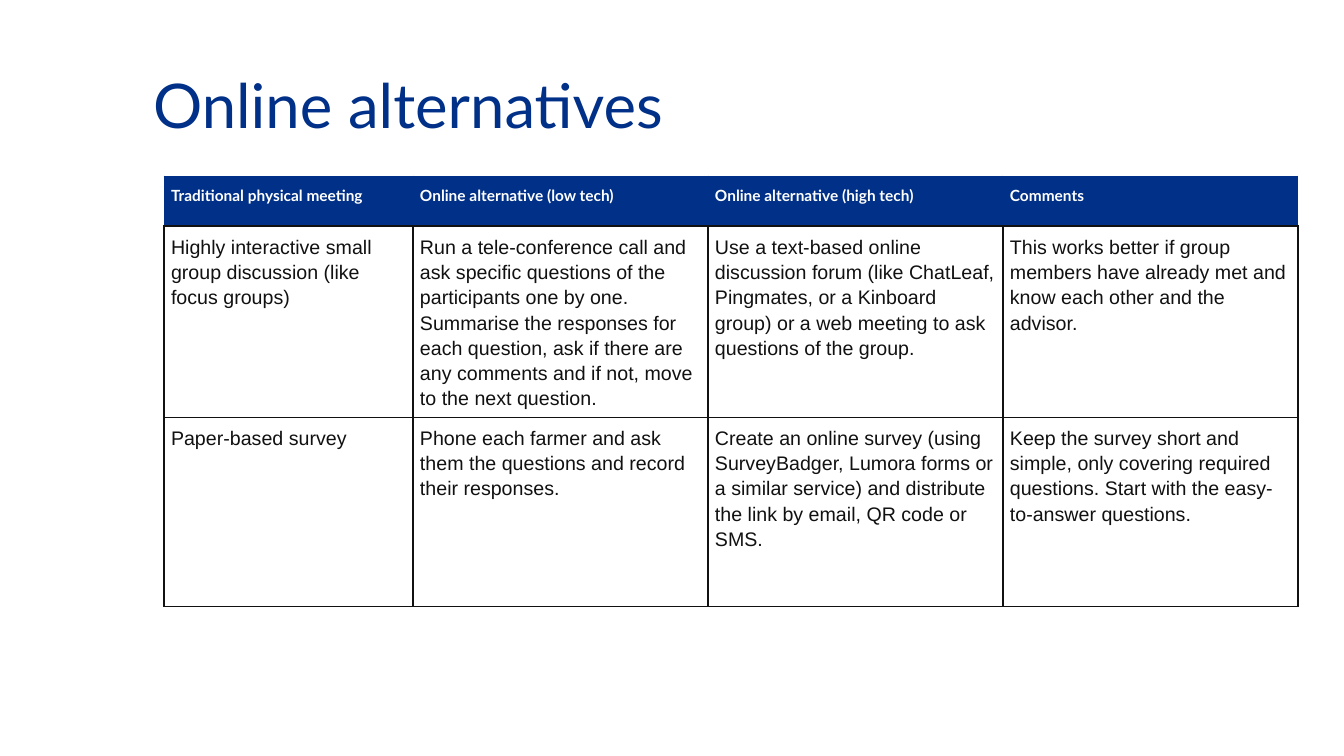
from lxml import etree
from pptx import Presentation
from pptx.dml.color import RGBColor
from pptx.enum.text import MSO_ANCHOR, PP_ALIGN
from pptx.oxml.ns import qn
from pptx.util import Emu, Pt

MIDDLE, TOP, LEFT = MSO_ANCHOR.MIDDLE, MSO_ANCHOR.TOP, PP_ALIGN.LEFT

# Content
TITLE = "Online alternatives"
HEADER = ["Traditional physical meeting", "Online alternative (low tech)",
          "Online alternative (high tech)", "Comments"]
ROWS = [
    ["Highly interactive small group discussion (like focus groups)",
     "Run a tele-conference call and ask specific questions of the participants one by one. "
     "Summarise the responses for each question, ask if there are any comments and if not, "
     "move to the next question.",
     "Use a text-based online discussion forum (like ChatLeaf, Pingmates, or a "
     "Kinboard group) or a web meeting to ask questions of the group.",
     "This works better if group members have already met and know each other and the advisor."],
    ["Paper-based survey",
     "Phone each farmer and ask them the questions and record their responses.",
     "Create an online survey (using SurveyBadger, Lumora forms or a similar service) "
     "and distribute the link by email, QR code or SMS.",
     "Keep the survey short and simple, only covering required questions. "
     "Start with the easy-to-answer questions."],
]

# Layout in px
SLIDE_SIZE = (1344, 756)
TITLE_BOX = (143, 52, 1134, 104)
TABLE_LEFT, TABLE_TOP = 164, 176
COLUMN_WIDTHS = [249, 295, 295, 295]
ROW_HEIGHTS = [50, 191, 189]
CELL_MARGIN = 7

BLUE, WHITE, INK = "003087", "FFFFFF", "111111"


def px(length):
    return Emu(round(length * 914400 / 100.8))


def color(value):
    return RGBColor.from_string(value)


def write(frame, text, *, size, font, fill, bold=False, spacing=1.0):
    frame.word_wrap = True
    paragraph = frame.paragraphs[0]
    paragraph.alignment = LEFT
    paragraph.line_spacing = spacing
    run = paragraph.add_run()
    run.text = text
    run.font.size = Pt(size)
    run.font.name = font
    run.font.bold = bold
    run.font.color.rgb = color(fill)


def set_borders(cell, borders):
    properties = cell._tc.get_or_add_tcPr()
    for side in "LRTB":
        value, width = borders[side]
        line = etree.SubElement(properties, qn(f"a:ln{side}"), w=str(Pt(width)))
        fill = etree.SubElement(line, qn("a:solidFill"))
        etree.SubElement(fill, qn("a:srgbClr"), val=value)


def add_title(slide):
    title = slide.shapes.title
    title.left, title.top, title.width, title.height = map(px, TITLE_BOX)
    title.text_frame.vertical_anchor = MIDDLE
    write(title.text_frame, TITLE, size=44, font="Lato", fill=BLUE)


def add_comparison_table(slide):
    table = slide.shapes.add_table(
        len(ROW_HEIGHTS), len(COLUMN_WIDTHS), px(TABLE_LEFT), px(TABLE_TOP),
        px(sum(COLUMN_WIDTHS)), px(sum(ROW_HEIGHTS))).table
    table.horz_banding = False
    for column, width in zip(table.columns, COLUMN_WIDTHS):
        column.width = px(width)
    for row, height in zip(table.rows, ROW_HEIGHTS):
        row.height = px(height)

    body_borders = dict.fromkeys("LRTB", (INK, 1))
    header_borders = dict.fromkeys("LRT", (BLUE, 0.75)) | {"B": (INK, 1)}
    header_text = dict(size=11, font="Lato", fill=WHITE, bold=True)
    body_text = dict(size=14, font="Arial", fill=INK)

    for row_index, texts in enumerate([HEADER, *ROWS]):
        is_header = row_index == 0
        for column_index, text in enumerate(texts):
            cell = table.cell(row_index, column_index)
            cell.margin_left = cell.margin_right = px(CELL_MARGIN)
            cell.margin_top = cell.margin_bottom = px(CELL_MARGIN)
            cell.vertical_anchor = TOP
            set_borders(cell, header_borders if is_header else body_borders)
            cell.fill.solid()
            cell.fill.fore_color.rgb = color(BLUE if is_header else WHITE)
            write(cell.text_frame, text, spacing=1.15,
                  **(header_text if is_header else body_text))


def main():
    presentation = Presentation()
    presentation.slide_width, presentation.slide_height = map(px, SLIDE_SIZE)
    slide = presentation.slides.add_slide(presentation.slide_layouts[5])
    add_title(slide)
    add_comparison_table(slide)
    presentation.save("out.pptx")


if __name__ == "__main__":
    main()
